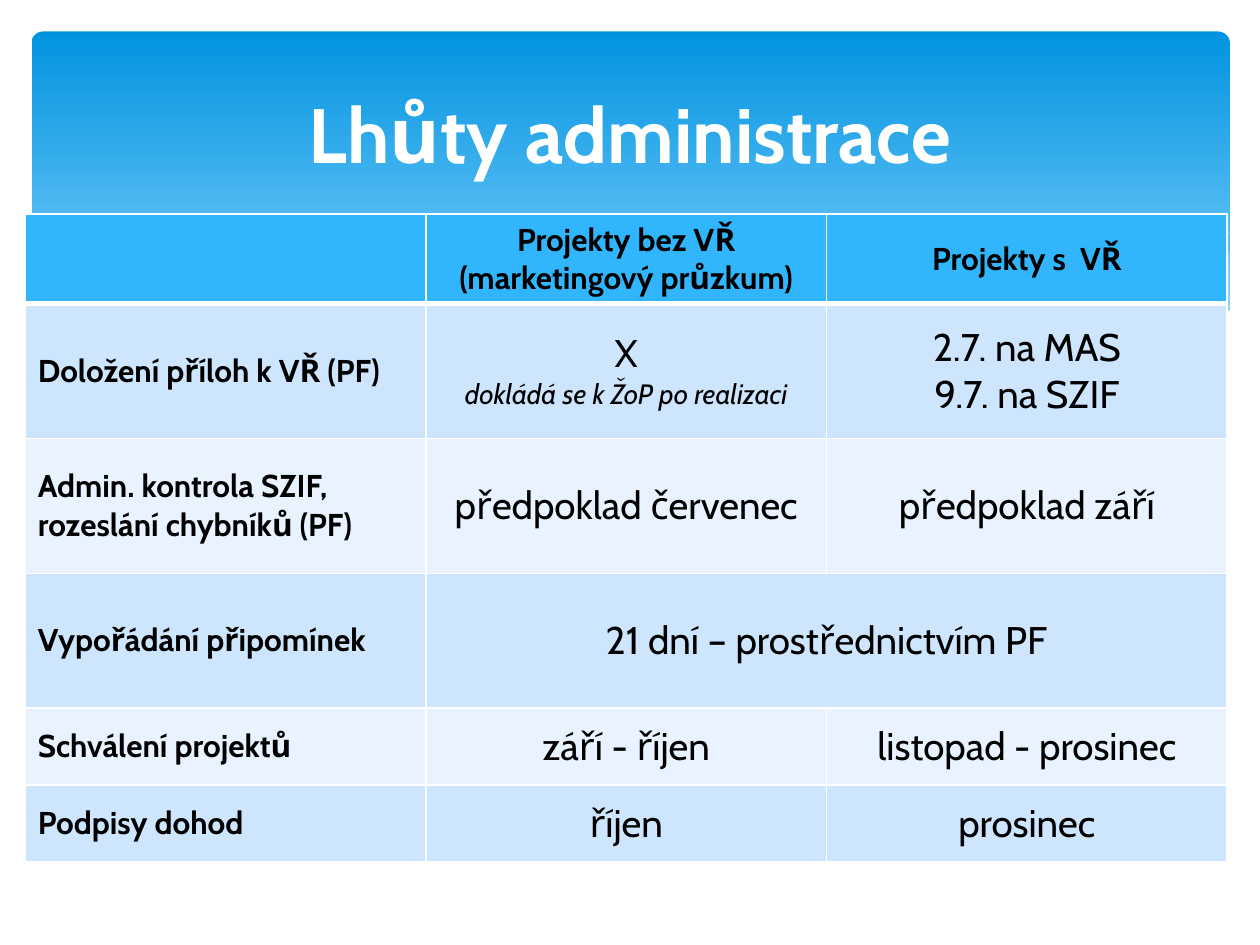
from lxml.etree import SubElement
from pptx import Presentation
from pptx.dml.color import RGBColor
from pptx.enum.shapes import MSO_SHAPE
from pptx.enum.text import MSO_ANCHOR, PP_ALIGN
from pptx.oxml import parse_xml
from pptx.oxml.ns import nsdecls, qn
from pptx.util import Inches, Pt

hues = {
    "white": "FFFFFF", "black": "000000", "deep": "0293E0", "sky": "83D3FE",
    "mist": "C6E7FC", "head": "31B6FD", "odd": "CEE5FE", "even": "E8F3FF",
}


def tint(name):
    return RGBColor.from_string(hues[name])


def style(para, size, bold=False, italic=False, color="black"):
    font = para.font
    font.name = "Cabin"
    font.size = Pt(size)
    font.bold = bold
    font.italic = italic
    font.color.rgb = tint(color)


prs = Presentation()
prs.slide_width = Inches(10)
prs.slide_height = Inches(7.5)
slide = prs.slides.add_slide(prs.slide_layouts[5])
shapes = slide.shapes

banner = shapes.add_shape(
    MSO_SHAPE.ROUNDED_RECTANGLE, Inches(0.25), Inches(0.25), Inches(9.51), Inches(2.7))
banner.shadow.inherit = False
banner.adjustments[0] = 0.034
banner.line.fill.background()
banner.fill.gradient()
banner.fill.gradient_angle = 270
for stop, spot, name in zip(banner.fill.gradient_stops, (0, 0.9), ("deep", "sky")):
    stop.position = spot
    stop.color.rgb = tint(name)

waves = [
    ("mist", 29, [
        (9.76, 2), (9.35, 2.07), (8.61, 2.23), (7.79, 2.42), (6.61, 2.65), (7.05, 2.71),
        (7.57, 2.76), (8.14, 2.78), (8.63, 2.75), (9.05, 2.69), (9.42, 2.59), (9.76, 2.47)]),
    ("mist", 40, [
        (8.93, 2.73), (8.37, 2.65), (7.41, 2.47), (6.29, 2.22), (5.55, 2.05), (4.89, 1.94),
        (4.2, 1.87), (3.61, 1.85), (2.86, 1.91), (3.62, 2.03), (4.49, 2.22), (5.66, 2.48),
        (6.5, 2.64), (7.22, 2.74), (7.96, 2.78), (8.48, 2.77)]),
    ("line", 0, [
        (3.09, 1.95), (3.53, 1.89), (4.16, 1.87), (4.89, 1.9), (5.56, 1.97), (6.36, 2.08),
        (7.27, 2.26), (8.31, 2.51), (9.07, 2.72)]),
    ("line", 0, [
        (6.13, 2.57), (6.95, 2.35), (7.76, 2.16), (8.66, 1.99), (9.24, 1.9), (9.75, 1.85)]),
    ("white", 100, [
        (9.77, 2.46), (9.4, 2.59), (8.99, 2.69), (8.5, 2.75), (7.93, 2.76), (7.26, 2.72),
        (6.48, 2.62), (5.55, 2.45), (4.47, 2.2), (3.65, 2.02), (2.92, 1.9), (2.3, 1.85),
        (1.77, 1.84), (1.19, 1.87), (0.76, 1.95), (0.4, 2.05), (0.23, 2.13), (0.23, 3.29),
        (9.77, 3.29)]),
]
for name, share, spots in waves:
    first, *rest = [(Inches(x), Inches(y)) for x, y in spots]
    pen = shapes.build_freeform(*first)
    pen.add_line_segments(rest, close=name != "line")
    wave = pen.convert_to_shape()
    wave.shadow.inherit = False
    if name == "line":
        wave.fill.background()
        wave.line.color.rgb = tint("white")
        wave.line.width = Pt(0)
        continue
    wave.line.fill.background()
    wave.fill.solid()
    wave.fill.fore_color.rgb = tint(name)
    if share < 100:
        solid = wave._element.spPr.find(qn("a:solidFill"))
        SubElement(solid[0], qn("a:alpha")).set("val", str(share * 1000))

title = shapes.title
shapes._spTree.append(title._element)
title.left, title.top = Inches(0.5), Inches(0.37)
title.width, title.height = Inches(9), Inches(1.37)
title.text = "Lhůty administrace"
title.text_frame.vertical_anchor = MSO_ANCHOR.MIDDLE
title.text_frame.paragraphs[0].alignment = PP_ALIGN.CENTER
style(title.text_frame.paragraphs[0], 44, bold=True, color="white")

rows = [
    (0.7, ["", "Projekty bez VŘ (marketingový průzkum)", "Projekty s  VŘ"]),
    (1.07, ["Doložení příloh k VŘ (PF)", "X\ndokládá se k ŽoP po realizaci",
            "2.7. na MAS\n9.7. na SZIF"]),
    (1.07, ["Admin. kontrola SZIF, rozeslání chybníků (PF)", "předpoklad červenec",
            "předpoklad září"]),
    (1.07, ["Vypořádání připomínek", "21 dní – prostřednictvím PF", ""]),
    (0.61, ["Schválení projektů", "září - říjen", "listopad - prosinec"]),
    (0.61, ["Podpisy dohod", "říjen", "prosinec"]),
]
table = shapes.add_table(
    len(rows), 3, Inches(0.2), Inches(1.7), Inches(9.53), Inches(5.13)).table
table.first_row = table.horz_banding = False
for col in table.columns:
    col.width = Inches(3.18)

for r, (height, texts) in enumerate(rows):
    table.rows[r].height = Inches(height)
    for c, text in enumerate(texts):
        cell = table.cell(r, c)
        cell.vertical_anchor = MSO_ANCHOR.MIDDLE
        cell.fill.solid()
        cell.fill.fore_color.rgb = tint("head" if r == 0 else "odd" if r % 2 else "even")
        for i, side in enumerate("LRTB"):
            thick = (r, side) in ((0, "B"), (1, "T"))
            cell._tc.tcPr.insert(i, parse_xml(
                f'<a:ln{side} {nsdecls("a")} w="{Pt(3 if thick else 1)}"><a:solidFill>'
                f'<a:srgbClr val="{hues["white"]}"/></a:solidFill></a:ln{side}>'))
        if not text:
            continue
        cell.text = text
        bold = r == 0 or c == 0
        for para in cell.text_frame.paragraphs:
            note = para.text.startswith("dokládá")
            para.alignment = PP_ALIGN.CENTER if c else PP_ALIGN.LEFT
            style(para, 18 if bold else 16 if note else 22, bold, note)
table.cell(3, 1).merge(table.cell(3, 2))

prs.save("out.pptx")
